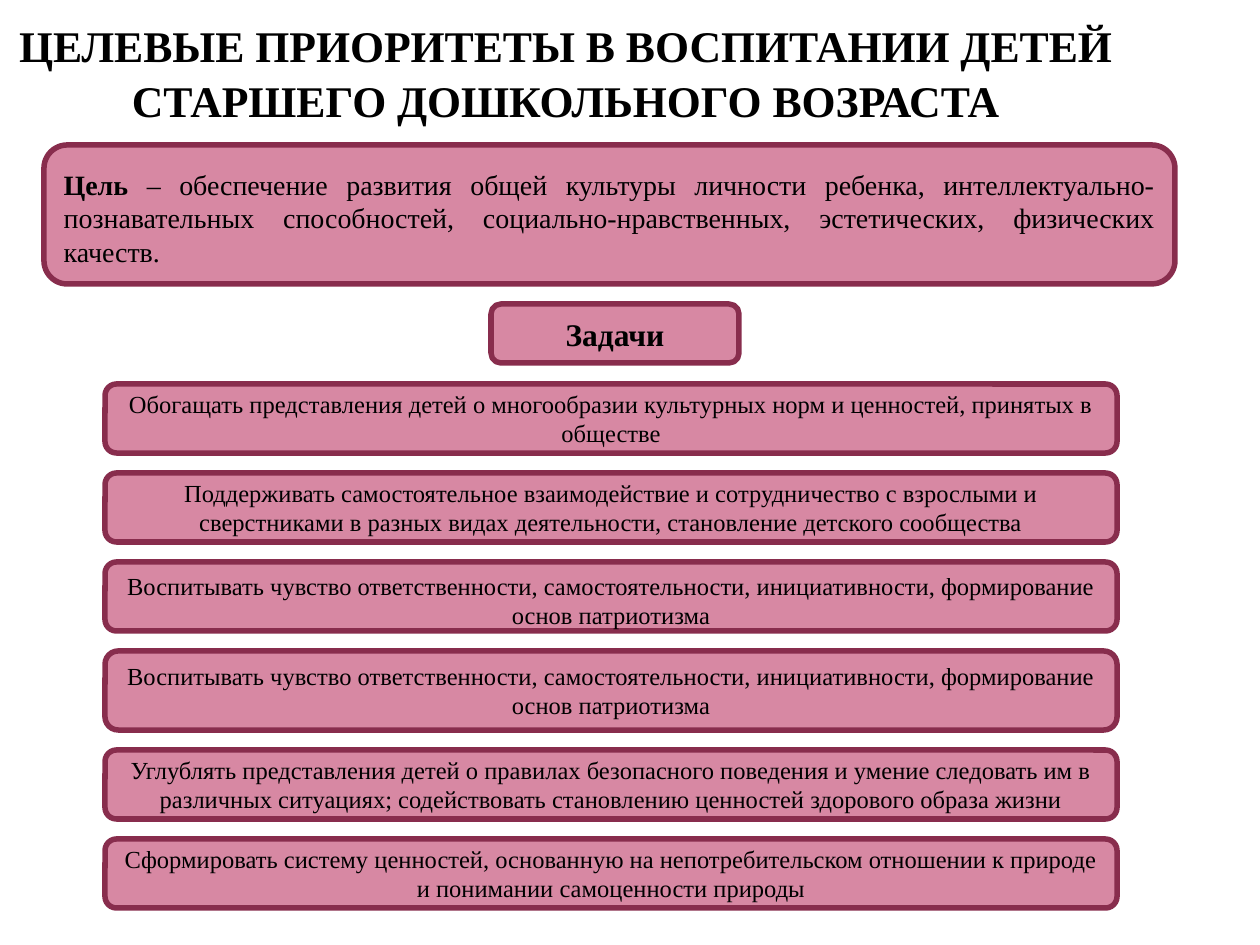
from pptx import Presentation
from pptx.dml.color import RGBColor
from pptx.enum.shapes import MSO_SHAPE
from pptx.enum.text import MSO_ANCHOR, PP_ALIGN
from pptx.util import Emu, Pt

EMU_PER_PX = 914400 / 126
FONT = "Times New Roman"
BLACK, PINK, PLUM = "000000", "D788A3", "882D4D"

TITLE = "ЦЕЛЕВЫЕ ПРИОРИТЕТЫ В ВОСПИТАНИИ ДЕТЕЙ СТАРШЕГО ДОШКОЛЬНОГО ВОЗРАСТА"
GOAL = [
    ("Цель", True),
    (" – обеспечение развития общей культуры личности ребенка, интеллектуально- "
     "познавательных способностей, социально-нравственных, эстетических, "
     "физических качеств.", False),
]
RESPONSIBILITY = ("Воспитывать чувство ответственности, самостоятельности, "
                  "инициативности, формирование основ патриотизма")
# Task text, box height, top and bottom insets
TASKS = [
    ("Обогащать представления детей о многообразии культурных норм и ценностей, "
     "принятых в обществе", 69, 6, 6),
    ("Поддерживать самостоятельное взаимодействие и сотрудничество с взрослыми и "
     "сверстниками в разных видах деятельности, становление детского сообщества",
     69, 6, 6),
    (RESPONSIBILITY, 69, 10, 3),
    (RESPONSIBILITY, 79, 6, 6),
    ("Углублять представления детей о правилах безопасного поведения и умение "
     "следовать им в различных ситуациях; содействовать становлению ценностей "
     "здорового образа жизни", 69, 6, 6),
    ("Сформировать систему ценностей, основанную на непотребительском отношении "
     "к природе и понимании самоценности природы", 69, 6, 6),
]
TASK_LEFT, TASK_TOP, TASK_WIDTH, TASK_GAP = 105, 384, 1012, 20


def px(length):
    return Emu(round(length * EMU_PER_PX))


def color(value):
    return RGBColor.from_string(value)


def apply(target, values):
    for name, value in values.items():
        setattr(target, name, value)


def write(shape, runs, size, align=PP_ALIGN.CENTER, anchor=MSO_ANCHOR.MIDDLE,
          top=6, bottom=6, side=13, spacing=1.0):
    """Fill a shape with one paragraph of (text, bold) runs."""
    apply(shape.text_frame, {
        "word_wrap": True, "vertical_anchor": anchor,
        "margin_top": px(top), "margin_bottom": px(bottom),
        "margin_left": px(side), "margin_right": px(side),
    })
    paragraph = shape.text_frame.paragraphs[0]
    apply(paragraph, {"alignment": align, "line_spacing": spacing})
    for text, bold in runs:
        run = paragraph.add_run()
        run.text = text
        apply(run.font, {"name": FONT, "size": Pt(size), "bold": bold})
        run.font.color.rgb = color(BLACK)


def add_title(slide):
    shape = slide.shapes.add_textbox(px(0), px(20), px(1131), px(106))
    write(shape, [(TITLE, True)], 25, anchor=MSO_ANCHOR.BOTTOM,
          top=0, bottom=0, side=6, spacing=1.05)


def add_card(slide, left, top, width, height):
    shape = slide.shapes.add_shape(
        MSO_SHAPE.ROUNDED_RECTANGLE, px(left), px(top), px(width), px(height))
    shape.shadow.inherit = False
    shape.fill.solid()
    shape.fill.fore_color.rgb = color(PINK)
    shape.line.color.rgb = color(PLUM)
    shape.line.width = Pt(3.15)
    return shape


def add_tasks(slide):
    top = TASK_TOP
    for text, height, inset_top, inset_bottom in TASKS:
        card = add_card(slide, TASK_LEFT, top, TASK_WIDTH, height)
        write(card, [(text, False)], 14, top=inset_top, bottom=inset_bottom)
        top += height + TASK_GAP


def main():
    presentation = Presentation()
    apply(presentation, {"slide_width": px(1260), "slide_height": px(945)})
    slide = presentation.slides.add_slide(presentation.slide_layouts[6])

    # Heading and goal
    add_title(slide)
    goal = add_card(slide, 44, 145, 1131, 139)
    write(goal, GOAL, 16, align=PP_ALIGN.JUSTIFY, top=10, bottom=4)

    # Tasks heading and list
    heading = add_card(slide, 491, 304, 248, 59)
    write(heading, [("Задачи", True)], 18)
    add_tasks(slide)

    presentation.save("out.pptx")


if __name__ == "__main__":
    main()
